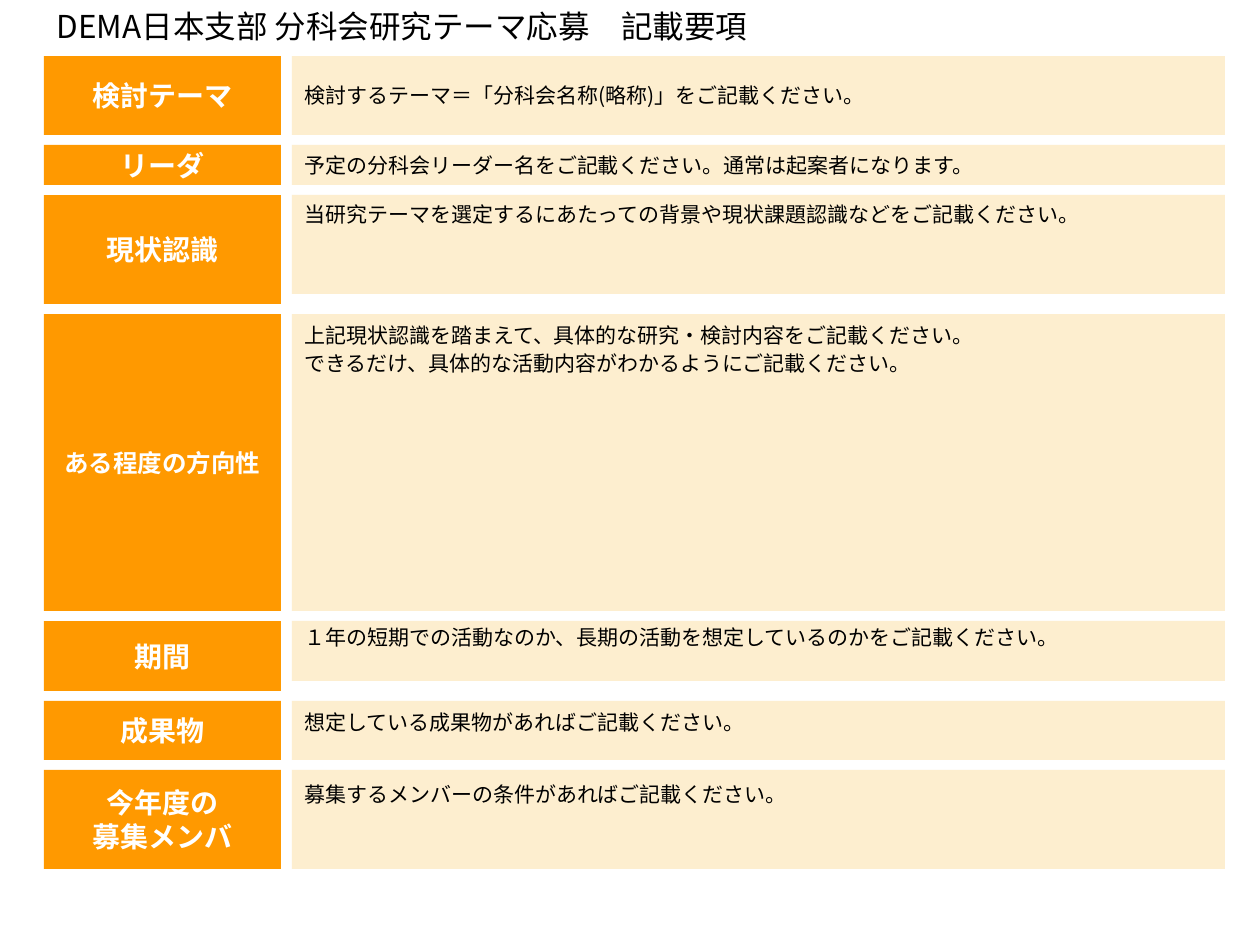
from pptx import Presentation, util as u
from pptx.dml.color import RGBColor
from pptx.enum import shapes, text
from pptx.oxml.ns import qn

PX = u.Inches(1) / 126
FONT = "Noto Sans CJK JP"
MID, TOP = text.MSO_ANCHOR.MIDDLE, text.MSO_ANCHOR.TOP
LEFT, CENTER = text.PP_ALIGN.LEFT, text.PP_ALIGN.CENTER


def px(n):
    return u.Emu(round(n * PX))


def rgb(code):
    return RGBColor.from_string(code)


def apply(obj, vals):
    for key, val in vals.items():
        setattr(obj, key, val)


class Form:
    """Holds the style and the current slide."""
    head = dict(size=u.Pt(16), bold=True, ink="FFFFFF", align=CENTER)
    body = dict(size=u.Pt(12), bold=False, ink="000000", align=LEFT)
    name = dict(size=u.Pt(18), bold=False, ink="000000", align=LEFT)

    def __init__(self, deck):
        self.slide = deck.slides.add_slide(deck.slide_layouts[5])

    def label(self, shape, words, style, anchor, lead=1.0):
        """Set the words of a shape and format them."""
        frame = shape.text_frame
        frame.text = words
        apply(frame, dict(word_wrap=True, vertical_anchor=anchor,
                          auto_size=text.MSO_AUTO_SIZE.NONE))
        for para in frame.paragraphs:
            apply(para, dict(alignment=style["align"], line_spacing=lead,
                             space_before=u.Pt(0)))
            for run in para.runs:
                apply(run.font, dict(name=FONT, size=style["size"],
                                     bold=style["bold"]))
                run.font.color.rgb = rgb(style["ink"])
                east = run.font._element.makeelement(qn("a:ea"), {"typeface": FONT})
                run.font._element.find(qn("a:latin")).addnext(east)

    def title(self, words, x, y, w, h):
        shape = self.slide.shapes.title
        apply(shape, dict(left=px(x), top=px(y), width=px(w), height=px(h)))
        self.label(shape, words, self.name, TOP, 0.9)

    def box(self, x, y, w, h, fill):
        shape = self.slide.shapes.add_shape(
            shapes.MSO_SHAPE.RECTANGLE, px(x), px(y), px(w), px(h))
        shape.shadow.inherit = False
        shape.fill.solid()
        shape.fill.fore_color.rgb = rgb(fill)
        shape.line.fill.background()
        return shape

    def row(self, y, high, low, words, size, note, anchor, lead):
        """Draw a heading of height high beside a note of height low."""
        style = dict(self.head, size=u.Pt(size))
        self.label(self.box(44, y, 237, high, "FF9900"), words, style, MID)
        self.label(self.box(292, y, 933, low, "FDEECF"), note, self.body,
                   anchor, lead)


# heading height, note height, heading, its size, note, anchor, line spacing
ROWS = [
    (79, 79, "検討テーマ", 16,
     "検討するテーマ＝「分科会名称(略称)」をご記載ください。", MID, 1.0),
    (40, 40, "リーダ", 16,
     "予定の分科会リーダー名をご記載ください。通常は起案者になります。", MID, 1.0),
    (109, 99, "現状認識", 16,
     "当研究テーマを選定するにあたっての背景や現状課題認識などをご記載ください。",
     TOP, 1.0),
    (297, 297, "ある程度の方向性", 14,
     "上記現状認識を踏まえて、具体的な研究・検討内容をご記載ください。\n"
     "できるだけ、具体的な活動内容がわかるようにご記載ください。", TOP, 1.1),
    (70, 60, "期間", 16,
     "１年の短期での活動なのか、長期の活動を想定しているのかをご記載ください。",
     TOP, 0.9),
    (59, 59, "成果物", 16, "想定している成果物があればご記載ください。", TOP, 1.1),
    (99, 99, "今年度の\n募集メンバ", 16,
     "募集するメンバーの条件があればご記載ください。", TOP, 1.2),
]
GAP = 10


def main():
    deck = Presentation()
    apply(deck, dict(slide_width=u.Inches(10), slide_height=u.Inches(7.5)))
    form = Form(deck)
    form.title("DEMA日本支部 分科会研究テーマ応募　記載要項", 44, 5, 824, 47)
    y = 56
    for high, *rest in ROWS:
        form.row(y, high, *rest)
        y += high + GAP
    deck.save("out.pptx")


if __name__ == "__main__":
    main()
